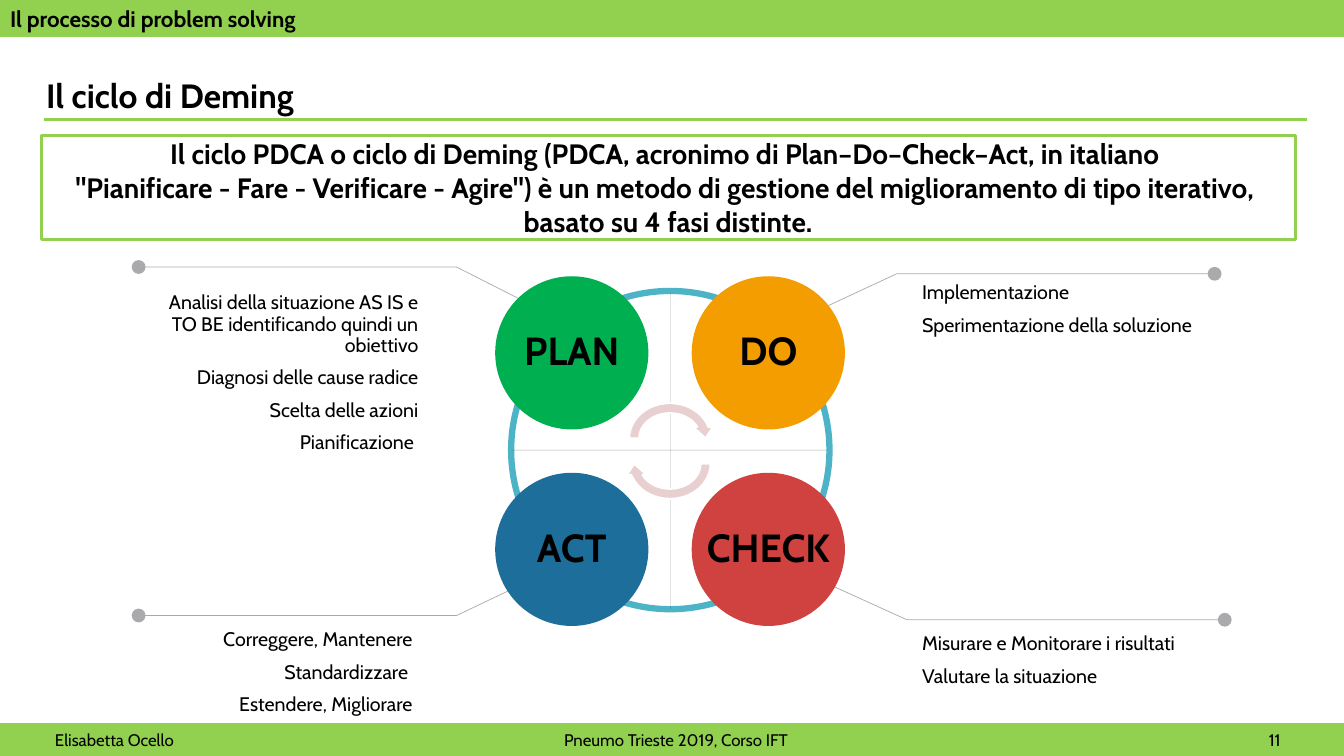
from pptx import Presentation
from pptx.dml.color import RGBColor
from pptx.enum.shapes import MSO_CONNECTOR, MSO_SHAPE
from pptx.enum.text import MSO_ANCHOR, PP_ALIGN
from pptx.oxml.ns import qn
from pptx.util import Inches, Pt
from lxml.etree import SubElement

COLORS = {
    "ink": "000000", "paper": "FFFFFF", "band": "92D050", "leader": "57565A",
    "ring": "4DB3C7", "arrow": "E8D0D0", "plan": "00B050", "do": "F49D00",
    "act": "1D6E9B", "check": "CF423F",
}
COLUMNS, ROWS = 160, 90
CELL = Inches(13.33) / COLUMNS

PHASES = [
    {"name": "PLAN", "color": "plan", "column": 0, "row": 0,
     "leader": (63.8, 36.6, 31.8), "box": (18.2, 34.3, 32.8, 20.5),
     "lines": ["Analisi della situazione AS IS e TO BE identificando quindi un obiettivo",
               "Diagnosi delle cause radice", "Scelta delle azioni", "Pianificazione "]},
    {"name": "DO", "color": "do", "column": 1, "row": 0,
     "leader": (97.3, 37, 32.6), "box": (108.6, 33.1, 38.4, 7.5),
     "lines": ["Implementazione", "Sperimentazione della soluzione"]},
    {"name": "ACT", "color": "act", "column": 0, "row": 1,
     "leader": (63.8, 68.8, 73.3), "box": (17.5, 74.4, 32.8, 11.6),
     "lines": ["Correggere, Mantenere", "Standardizzare ", "Estendere, Migliorare"]},
    {"name": "CHECK", "color": "check", "column": 1, "row": 1,
     "leader": (98.5, 69.5, 73.8), "box": (108.6, 74.9, 36.2, 7.5),
     "lines": ["Misurare e Monitorare i risultati", "Valutare la situazione"]},
]
DEFINITION = [
    "Il ciclo PDCA o ciclo di Deming (PDCA, acronimo di Plan–Do–Check–Act, in italiano ",
    "\"Pianificare - Fare - Verificare - Agire\") è un metodo di gestione del miglioramento di tipo iterativo, ",
    "basato su 4 fasi distinte.",
]


def grid(*values):
    return [round(value * CELL) for value in values]


def assign(target, values):
    for name, value in values.items():
        setattr(target, name, value)


class SlideBuilder:
    font_name = "Cabin"

    def __init__(self, deck):
        self.slide = deck.slides.add_slide(deck.slide_layouts[5])
        self.shapes = self.slide.shapes

    def fill_text(self, frame, lines, size, bold=False, paragraph_format=None, gap=0, **frame_format):
        assign(frame, {"word_wrap": True, "vertical_anchor": MSO_ANCHOR.MIDDLE, **frame_format})
        for index, line in enumerate(lines):
            para = frame.add_paragraph() if index else frame.paragraphs[0]
            assign(para, {"alignment": PP_ALIGN.LEFT, "space_before": Pt(gap if index else 0),
                          **(paragraph_format or {})})
            span = para.add_run()
            span.text = line
            assign(span.font, {"name": self.font_name, "size": Pt(size), "bold": bold})
            span.font.color.rgb = RGBColor.from_string(COLORS["ink"])

    def stroke(self, item, color, width, alpha=None):
        item.line.color.rgb = RGBColor.from_string(COLORS[color])
        item.line.width = Pt(width)
        line = item._element.spPr.find(qn("a:ln"))
        if alpha:
            color_node = line.find(".//" + qn("a:srgbClr"))
            SubElement(color_node, qn("a:alpha"), val=str(alpha * 1000))
        return line

    def title(self, text, box):
        holder = self.shapes.title
        assign(holder, dict(zip(("left", "top", "width", "height"), grid(*box))))
        self.fill_text(holder.text_frame, [text], 24, True, {"line_spacing": 0.9})

    def text(self, lines, box, alignment):
        frame = self.shapes.add_textbox(*grid(*box)).text_frame
        self.fill_text(frame, lines, 14, gap=8, vertical_anchor=MSO_ANCHOR.TOP,
                       paragraph_format={"alignment": alignment, "line_spacing": 0.9})

    def shape(self, kind, box, fill=None, line=None, width=1, rotation=0):
        item = self.shapes.add_shape(kind, *grid(*box))
        item.shadow.inherit = False
        item.rotation = rotation
        if fill:
            item.fill.solid()
            item.fill.fore_color.rgb = RGBColor.from_string(COLORS[fill])
        else:
            item.fill.background()
        if line:
            self.stroke(item, line, width)
        else:
            item.line.fill.background()
        return item

    def line(self, start, end, color, width, alpha=None):
        item = self.shapes.add_connector(MSO_CONNECTOR.STRAIGHT, *grid(*start, *end))
        self.stroke(item, color, width, alpha)
        SubElement(item._element.spPr, qn("a:effectLst"))

    def leader(self, start, top, end_row, direction):
        builder = self.shapes.build_freeform(*grid(start, top))
        points = [grid(start + direction * reach, end_row) for reach in (9.45, 47.3)]
        builder.add_line_segments(points, close=False)
        item = builder.convert_to_shape()
        item.shadow.inherit = False
        item.fill.background()
        line = self.stroke(item, "leader", 0.5, 50)
        SubElement(line, qn("a:tailEnd"), type="oval", w="lg", len="lg")

    def band(self, text, box, size, bold=False, indent=1.2, stops=()):
        frame = self.shape(MSO_SHAPE.RECTANGLE, box, "band", "band", 0.75).text_frame
        if stops:
            tabs = SubElement(frame.paragraphs[0]._p.get_or_add_pPr(), qn("a:tabLst"))
            for stop in grid(*stops):
                SubElement(tabs, qn("a:tab"), pos=str(stop), algn="l")
        self.fill_text(frame, [text], size, bold, margin_left=grid(indent)[0],
                       margin_top=0, margin_bottom=0)


def main():
    deck = Presentation()
    deck.slide_width, deck.slide_height = Inches(13.33), Inches(7.5)
    page = SlideBuilder(deck)
    page.title("Il ciclo di Deming", (4.3, 3.2, 151.2, 16.8))

    for phase in PHASES:
        on_right = phase["column"] == 1
        page.text(phase["lines"], phase["box"], PP_ALIGN.LEFT if on_right else PP_ALIGN.RIGHT)
        page.leader(*phase["leader"], 1 if on_right else -1)

    page.shape(MSO_SHAPE.OVAL, (60.85, 34.65, 37.9, 37.9), line="ring", width=4.5)
    for phase in PHASES:
        left, top = 58.95 + 23.4 * phase["column"], 32.9 + 23.4 * phase["row"]
        circle = page.shape(MSO_SHAPE.OVAL, (left, top, 18.24, 18.24), phase["color"])
        page.fill_text(circle.text_frame, [phase["name"]], 28, True, word_wrap=False,
                       paragraph_format={"alignment": PP_ALIGN.CENTER, "line_spacing": 0.9})

    page.line((79.8, 34.9), (79.8, 72.5), "leader", 0.25, 50)
    page.line((98.5, 53.6), (61, 53.6), "leader", 0.25, 50)
    for top, rotation in ((47.4, 0), (50.4, 180)):
        page.shape(MSO_SHAPE.CIRCULAR_ARROW, (74.3, top, 10.9, 9.6), "arrow", "paper", 1.5, rotation)

    definition = page.shape(MSO_SHAPE.RECTANGLE, (4.9, 16.1, 149.3, 12.4), "paper", "band", 2.25)
    page.fill_text(definition.text_frame, DEFINITION, 20, True, {"alignment": PP_ALIGN.CENTER})
    page.line((5.3, 14.2), (155.6, 14.2), "band", 2.25)
    page.band("Elisabetta Ocello\tPneumo Trieste 2019, Corso IFT\t11",
              (0, 86.2, COLUMNS, 3.8), 12, indent=6.55, stops=(60.6, 144.5))
    page.band("Il processo di problem solving", (0, 0, COLUMNS, 4.4), 16, True)
    deck.save("out.pptx")


if __name__ == "__main__":
    main()
